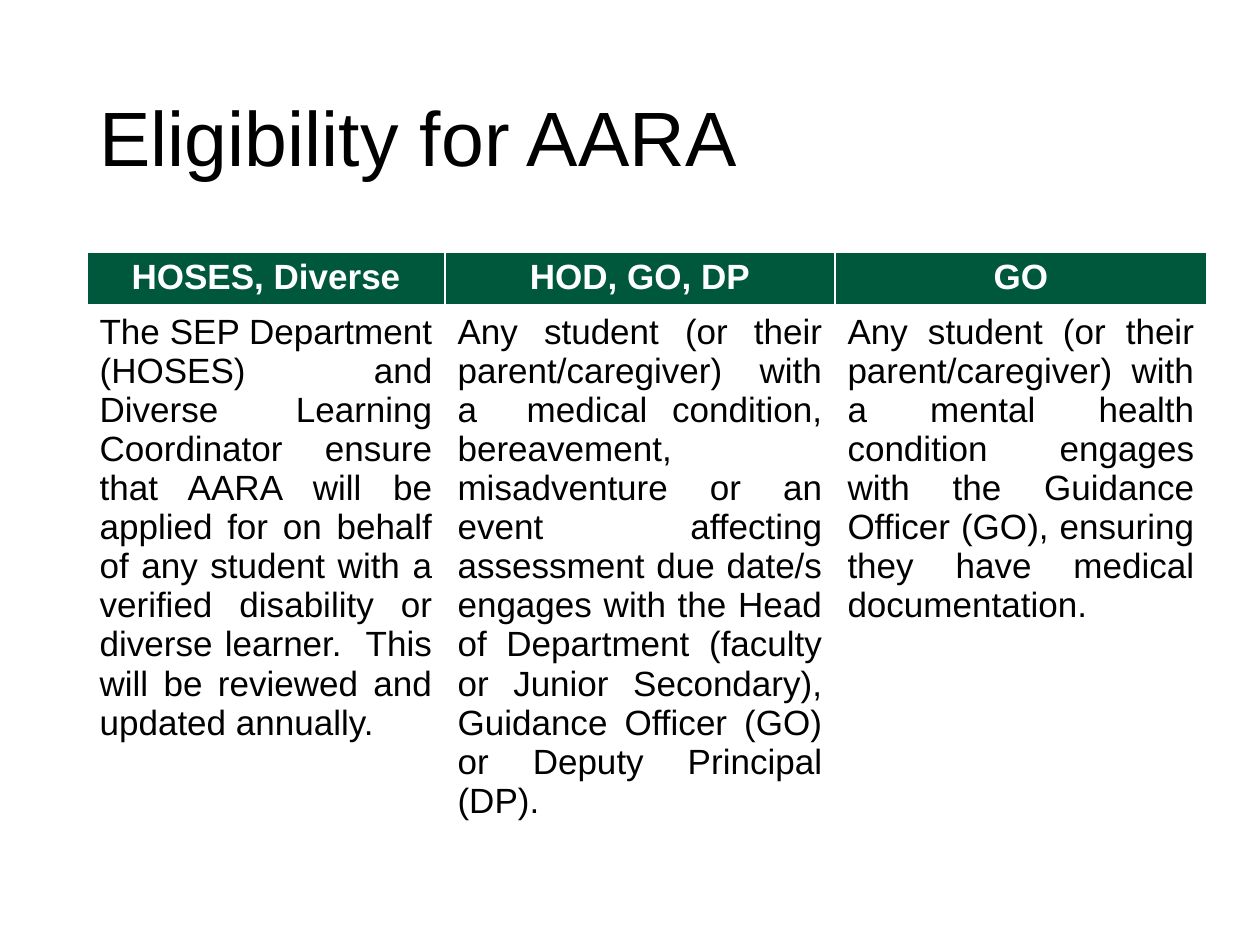
from dataclasses import dataclass
from typing import Any

from lxml.etree import SubElement
from pptx import Presentation
from pptx.dml.color import RGBColor
from pptx.enum.text import MSO_ANCHOR, PP_ALIGN
from pptx.oxml.ns import qn
from pptx.util import Emu, Pt

EMU_PER_PX = 914400 / 126
COLORS = {"text": "000000", "header": "00583C", "white": "FFFFFF"}
TITLE_FORMAT = {"name": "Arial", "size": Pt(44), "bold": False}
HEADER_FORMAT = {"name": "Arial", "size": Pt(20), "bold": True}
BODY_FORMAT = {**HEADER_FORMAT, "bold": False}
HEADER_BORDERS = {"lnL": 1, "lnR": 1, "lnT": 1, "lnB": 3}
BODY_BORDERS = {"lnL": 1, "lnR": 1, "lnT": 3, "lnB": 1}
ROW_HEIGHT = 52


@dataclass(frozen=True)
class Pathway:
    contact: str
    eligibility: str
    width: int


PATHWAYS = [
    Pathway(
        "HOSES, Diverse",
        "The SEP Department (HOSES) and Diverse Learning Coordinator ensure "
        "that AARA will be applied for on behalf of any student with a verified "
        "disability or diverse learner.  This will be reviewed and updated annually.",
        358,
    ),
    Pathway(
        "HOD, GO, DP",
        "Any student (or their parent/caregiver) with a  medical condition, "
        "bereavement, misadventure or an event affecting assessment due date/s "
        "engages with the Head of Department (faculty or Junior Secondary), "
        "Guidance Officer (GO) or Deputy Principal (DP).",
        390,
    ),
    Pathway(
        "GO",
        "Any student (or their parent/caregiver) with a mental health condition "
        "engages with the Guidance Officer (GO), ensuring they have medical "
        "documentation.",
        372,
    ),
]


def px(length: int) -> Emu:
    return Emu(round(length * EMU_PER_PX))


def write(paragraph: Any, text: str, color: str, formats: dict[str, Any]) -> None:
    run = paragraph.add_run()
    run.text = text
    for attribute, value in formats.items():
        setattr(run.font, attribute, value)
    run.font.color.rgb = RGBColor.from_string(COLORS[color])


def draw_borders(cell: Any, borders: dict[str, int]) -> None:
    properties = cell._tc.get_or_add_tcPr()
    for position, (side, width) in enumerate(borders.items()):
        line = SubElement(properties, qn(f"a:{side}"), w=str(Pt(width)))
        fill = SubElement(line, qn("a:solidFill"))
        SubElement(fill, qn("a:srgbClr"), val=COLORS["white"])
        properties.insert(position, line)


def draw_title(slide: Any) -> None:
    title = slide.shapes.add_textbox(px(87), px(50), px(1086), px(183))
    frame = title.text_frame
    frame.word_wrap = True
    frame.vertical_anchor = MSO_ANCHOR.MIDDLE
    heading = frame.paragraphs[0]
    heading.line_spacing = 0.9
    write(heading, "Eligibility for AARA", "text", TITLE_FORMAT)


def draw_pathways(slide: Any, pathways: list[Pathway]) -> None:
    total_width = sum(pathway.width for pathway in pathways)
    table = slide.shapes.add_table(
        2, len(pathways), px(87), px(252), px(total_width), px(2 * ROW_HEIGHT)
    ).table
    table.horz_banding = False
    for row in table.rows:
        row.height = px(ROW_HEIGHT)
    for column, pathway in enumerate(pathways):
        table.columns[column].width = px(pathway.width)

        header = table.cell(0, column)
        header.fill.solid()
        header.fill.fore_color.rgb = RGBColor.from_string(COLORS["header"])
        draw_borders(header, HEADER_BORDERS)
        contact = header.text_frame.paragraphs[0]
        contact.alignment = PP_ALIGN.CENTER
        write(contact, pathway.contact, "white", HEADER_FORMAT)

        body = table.cell(1, column)
        body.fill.background()
        draw_borders(body, BODY_BORDERS)
        eligibility = body.text_frame.paragraphs[0]
        eligibility.alignment = PP_ALIGN.JUSTIFY
        write(eligibility, pathway.eligibility, "text", BODY_FORMAT)


def main() -> None:
    presentation = Presentation()
    presentation.slide_width = px(1260)
    presentation.slide_height = px(945)
    slide = presentation.slides.add_slide(presentation.slide_layouts[6])
    draw_title(slide)
    draw_pathways(slide, PATHWAYS)
    presentation.save("out.pptx")


if __name__ == "__main__":
    main()
